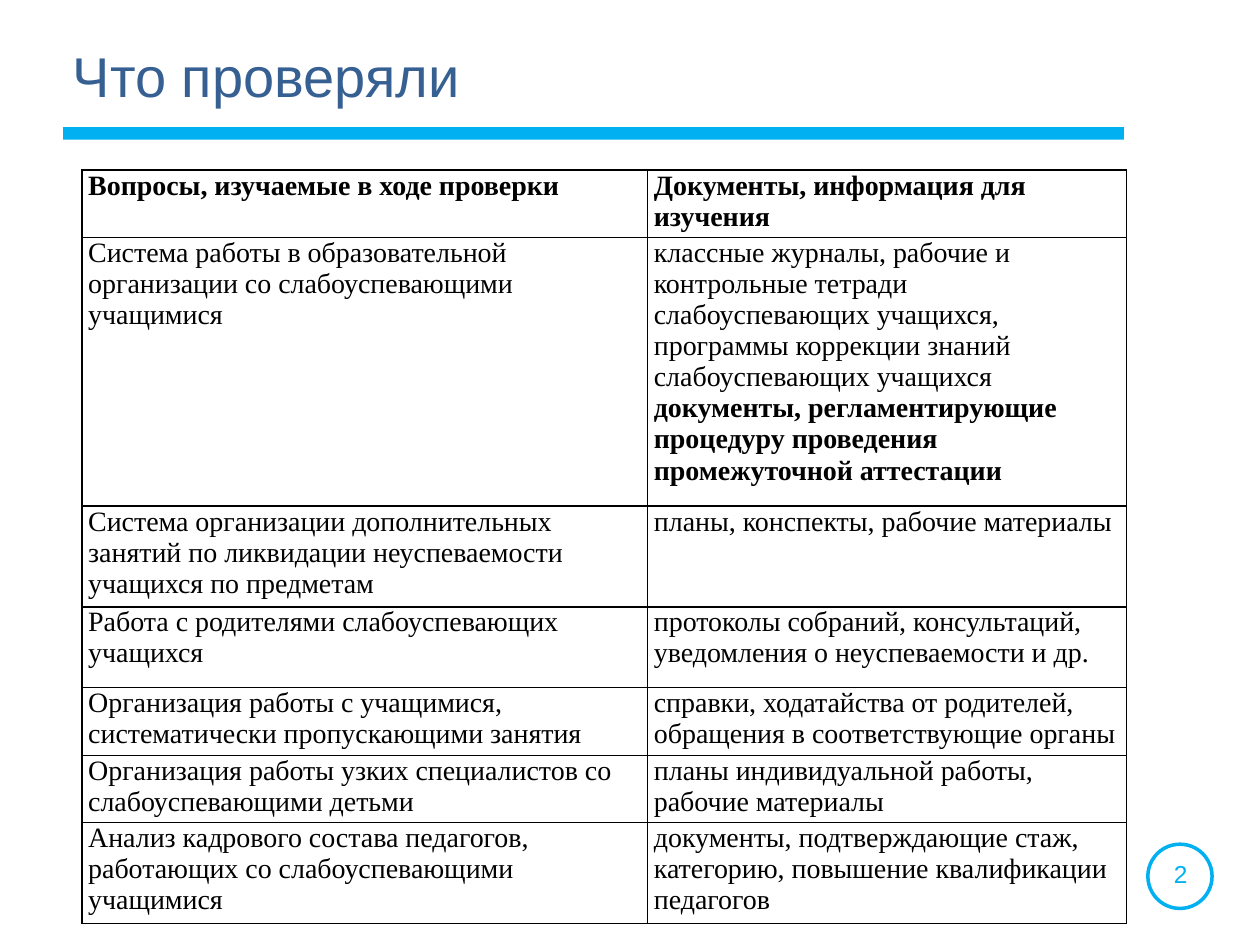
from typing import NamedTuple

from lxml.etree import SubElement
from pptx import Presentation
from pptx.dml.color import RGBColor
from pptx.enum.shapes import MSO_SHAPE as Shape
from pptx.enum.text import PP_ALIGN as Align
from pptx.oxml.ns import qn
from pptx.util import Inches, Pt

SKY = RGBColor(0x00, 0xB0, 0xF0)
BLUE = RGBColor(0x37, 0x60, 0x92)
BLACK = RGBColor(0x00, 0x00, 0x00)

COLUMN_WIDTHS = (4.49, 3.8)
CELL_FORMAT = {"size": Pt(16), "name": "Times New Roman"}
CELL_MARGINS = {
    "margin_left": Inches(0.05),
    "margin_right": Inches(0.05),
    "margin_top": 0,
    "margin_bottom": 0,
}


class Row(NamedTuple):
    height: float
    question: str
    documents: str
    bold: bool = False
    bold_documents: str = ""


ROWS = (
    Row(0.53, "Вопросы, изучаемые в ходе проверки",
        "Документы, информация для изучения", bold=True),
    Row(2.13, "Система работы в образовательной организации со "
        "слабоуспевающими учащимися",
        "классные журналы, рабочие и контрольные тетради слабоуспевающих "
        "учащихся, программы коррекции знаний слабоуспевающих учащихся",
        bold_documents="документы, регламентирующие процедуру проведения "
        "промежуточной аттестации"),
    Row(0.8, "Система организации дополнительных занятий по ликвидации "
        "неуспеваемости учащихся по предметам",
        "планы, конспекты, рабочие материалы"),
    Row(0.64, "Работа с родителями слабоуспевающих учащихся",
        "протоколы собраний, консультаций, уведомления о неуспеваемости и др."),
    Row(0.54, "Организация работы с учащимися, систематически "
        "пропускающими занятия",
        "справки, ходатайства от родителей, обращения в соответствующие органы"),
    Row(0.53, "Организация работы узких специалистов со слабоуспевающими детьми",
        "планы индивидуальной работы, рабочие материалы"),
    Row(0.8, "Анализ кадрового состава педагогов, работающих со "
        "слабоуспевающими учащимися",
        "документы, подтверждающие стаж, категорию, повышение "
        "квалификации педагогов"),
)


def apply(target, values: dict) -> None:
    for name, value in values.items():
        setattr(target, name, value)


def write(para, text: str, color: RGBColor, **values) -> None:
    span = para.add_run()
    span.text = text
    apply(span.font, values)
    span.font.color.rgb = color


def add_label(page, at: tuple, text: str, color: RGBColor, size: int,
              align=Align.LEFT) -> None:
    box = page.shapes.add_textbox(*map(Inches, at))
    box.text_frame.word_wrap = True
    para = box.text_frame.paragraphs[0]
    para.alignment = align
    write(para, text, color, size=Pt(size), name="Arial")


def add_outline(cell) -> None:
    """Draw a black one-point border on all four sides of the cell."""
    properties = cell._tc.get_or_add_tcPr()
    for position, side in enumerate(("lnL", "lnR", "lnT", "lnB")):
        border = properties.makeelement(qn(f"a:{side}"), {"w": str(Pt(1))})
        properties.insert(position, border)
        fill = SubElement(border, qn("a:solidFill"))
        SubElement(fill, qn("a:srgbClr"), val=str(BLACK))


def fill_cell(cell, text: str, bold: bool, bold_text: str = "") -> None:
    apply(cell, CELL_MARGINS)
    cell.fill.background()
    add_outline(cell)
    frame = cell.text_frame
    write(frame.paragraphs[0], text, BLACK, bold=bold, **CELL_FORMAT)
    if bold_text:
        write(frame.add_paragraph(), bold_text, BLACK, bold=True, **CELL_FORMAT)


def add_review_table(page) -> None:
    width = sum(COLUMN_WIDTHS)
    height = sum(row.height for row in ROWS)
    table = page.shapes.add_table(
        len(ROWS), len(COLUMN_WIDTHS),
        *map(Inches, (0.65, 1.35, width, height))).table
    apply(table, {"first_row": False, "horz_banding": False})
    for column, column_width in zip(table.columns, COLUMN_WIDTHS):
        column.width = Inches(column_width)
    for line, row in zip(table.rows, ROWS):
        line.height = Inches(row.height)
        question, documents = line.cells
        fill_cell(question, row.question, row.bold)
        fill_cell(documents, row.documents, row.bold, row.bold_documents)


def add_decoration(page) -> None:
    bar = page.shapes.add_shape(
        Shape.RECTANGLE, *map(Inches, (0.5, 1.01, 8.42, 0.1)))
    bar.fill.solid()
    bar.fill.fore_color.rgb = SKY
    bar.line.fill.background()
    ring = page.shapes.add_shape(
        Shape.OVAL, *map(Inches, (9.11, 6.7, 0.51, 0.51)))
    ring.fill.background()
    ring.line.color.rgb = SKY
    ring.line.width = Pt(2)
    for shape in (bar, ring):
        shape.shadow.inherit = False


def main() -> None:
    deck = Presentation()
    deck.slide_width, deck.slide_height = Inches(10), Inches(7.5)
    page = deck.slides.add_slide(deck.slide_layouts[6])
    add_decoration(page)
    add_label(page, (9.08, 6.77, 0.58, 0.34), "2", SKY, 14, Align.CENTER)
    add_label(page, (0.48, 0.28, 8.22, 0.64), "Что проверяли", BLUE, 32)
    add_review_table(page)
    deck.save("out.pptx")


if __name__ == "__main__":
    main()
